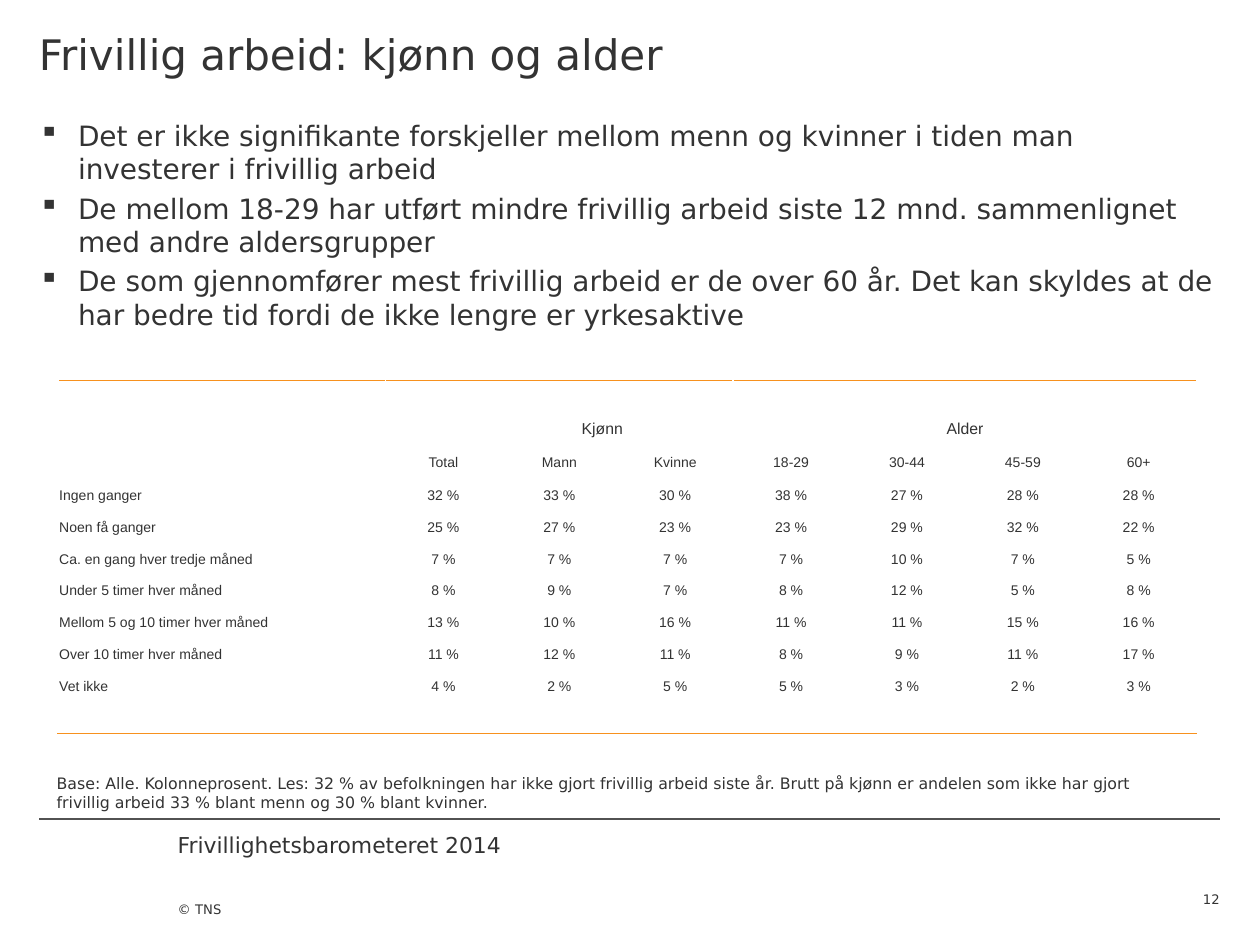
from dataclasses import dataclass

from lxml.etree import SubElement
from pptx import Presentation
from pptx.dml.color import RGBColor
from pptx.enum.shapes import MSO_CONNECTOR
from pptx.enum.text import MSO_ANCHOR, PP_ALIGN
from pptx.oxml.ns import qn
from pptx.util import Inches, Pt


@dataclass(frozen=True)
class Theme:
    ink: str = "333333"
    rule: str = "525252"
    accent: str = "F7911E"
    sans: str = "DejaVu Sans"
    grid: str = "Arial"
    title: float = 24
    body: float = 16
    footer: float = 12.5
    note: float = 9
    cell: float = 8
    small: float = 7.5


theme = Theme()


def assign(target, values):
    """Set each named attribute of the target."""
    for name, value in values.items():
        setattr(target, name, value)


def write(frame, lines, size, face=theme.sans, align=PP_ALIGN.LEFT):
    """Fill a text frame with one paragraph per line."""
    for index, line in enumerate(lines):
        para = frame.paragraphs[0] if index == 0 else frame.add_paragraph()
        para.alignment = align
        run = para.add_run()
        run.text = line
        assign(run.font, {"size": Pt(size), "name": face, "bold": False})
        run.font.color.rgb = RGBColor.from_string(theme.ink)


deck = Presentation()
assign(deck, {"slide_width": Inches(10), "slide_height": Inches(7.5)})
slide = deck.slides.add_slide(deck.slide_layouts[6])

# Footer rule
rule = slide.shapes.add_connector(
    MSO_CONNECTOR.STRAIGHT, Inches(0.31), Inches(6.5), Inches(9.68), Inches(6.5))
rule.line.color.rgb = RGBColor.from_string(theme.rule)
rule.line.width = Pt(0.75)
SubElement(rule.line._get_or_add_ln().getparent(), qn("a:effectLst"))

# Text boxes: place, lines, size, top inset, format
points = [
    "Det er ikke signifikante forskjeller mellom menn og kvinner i tiden man "
    "investerer i frivillig arbeid",
    "De mellom 18-29 har utført mindre frivillig arbeid siste 12 mnd. "
    "sammenlignet med andre aldersgrupper",
    "De som gjennomfører mest frivillig arbeid er de over 60 år. Det kan "
    "skyldes at de har bedre tid fordi de ikke lengre er yrkesaktive",
]
note = [
    "Base: Alle. Kolonneprosent. Les: 32 % av befolkningen har ikke gjort "
    "frivillig arbeid siste år. Brutt på kjønn er andelen som ikke har gjort",
    "frivillig arbeid 33 % blant menn og 30 % blant kvinner.",
]
low = {"vertical_anchor": MSO_ANCHOR.BOTTOM}
head = {"margin_top": Inches(0.23)}
boxes = [
    ((1.41, 6.6, 3.31, 0.42), ["Frivillighetsbarometeret 2014"], theme.footer, {}),
    ((1.41, 6.92, 2.78, 0.58), ["© TNS"], theme.small,
     {**low, "margin_bottom": Inches(0.31)}),
    ((0.31, 0, 9.37, 1.13), ["Frivillig arbeid: kjønn og alder"], theme.title, head),
    ((9.13, 6.92, 0.55, 0.28), ["12"], theme.small, low),
    ((0.31, 0.71, 9.37, 0.83), points, theme.body, head),
    ((0.45, 6.14, 9.1, 0.32), note, theme.note, {"word_wrap": False}),
]
plain = {"word_wrap": True, "margin_left": 0, "margin_top": 0,
         "margin_right": 0, "margin_bottom": 0}
for place, lines, size, extra in boxes:
    frame = slide.shapes.add_textbox(*map(Inches, place)).text_frame
    assign(frame, {**plain, **extra})
    write(frame, lines, size, align=PP_ALIGN.RIGHT if lines == ["12"] else PP_ALIGN.LEFT)
    if lines is points:
        indent = Inches(0.31)
        for index, para in enumerate(frame.paragraphs):
            para.space_before = Pt(0.2 * theme.body if index else 0)
            props = para._p.get_or_add_pPr()
            props.set("marL", str(indent))
            props.set("indent", str(-indent))
            SubElement(props, qn("a:buChar"), char="▪")

# Table
labels = ["Total", "Mann", "Kvinne", "18-29", "30-44", "45-59", "60+"]
shares = {
    "Ingen ganger": [32, 33, 30, 38, 27, 28, 28],
    "Noen få ganger": [25, 27, 23, 23, 29, 32, 22],
    "Ca. en gang hver tredje måned": [7, 7, 7, 7, 10, 7, 5],
    "Under 5 timer hver måned": [8, 9, 7, 8, 12, 5, 8],
    "Mellom 5 og 10 timer hver måned": [13, 10, 16, 11, 11, 15, 16],
    "Over 10 timer hver måned": [11, 12, 11, 8, 9, 11, 17],
    "Vet ikke": [4, 2, 5, 5, 3, 2, 3],
}
blank = [""] * 8
rows = [blank, ["", "Kjønn", "", "", "Alder", "", "", ""], ["", *labels]]
rows += [[name, *(f"{share} %" for share in row)] for name, row in shares.items()]
rows.append(blank)

table = slide.shapes.add_table(
    len(rows), len(blank), Inches(0.46), Inches(3.02), Inches(9.06), Inches(2.8)).table
assign(table, {"first_row": False, "horz_banding": False})
for index, column in enumerate(table.columns):
    column.width = Inches(0.92 if index else 2.6)
for index, row in enumerate(table.rows):
    row.height = Inches(0.28 if index == 2 else 2.52 / 10)
for top in (0, 1):
    for first, last in ((1, 3), (4, 7)):
        table.cell(top, first).merge(table.cell(top, last))

tight = {"margin_left": Inches(0.01), "margin_top": Inches(0.01),
         "margin_right": Inches(0.01), "margin_bottom": 0,
         "vertical_anchor": MSO_ANCHOR.MIDDLE}
edges = {0: "a:lnT", len(rows) - 1: "a:lnB"}
for top, row in enumerate(rows):
    for left, text in enumerate(row):
        cell = table.cell(top, left)
        assign(cell, tight)
        if text:
            write(cell.text_frame, [text], theme.note if top == 1 else theme.cell,
                  theme.grid, PP_ALIGN.CENTER if left else PP_ALIGN.LEFT)
        else:
            SubElement(cell.text_frame.paragraphs[0]._p, qn("a:endParaRPr"),
                       sz=str(theme.cell * 100))
        if top in edges:
            edge = SubElement(cell._tc.get_or_add_tcPr(), qn(edges[top]), w=str(Pt(1)))
            SubElement(SubElement(edge, qn("a:solidFill")), qn("a:srgbClr"),
                       val=theme.accent)
        cell.fill.background()
table.cell(1, 1).margin_left = Inches(0.69)

deck.save("out.pptx")
